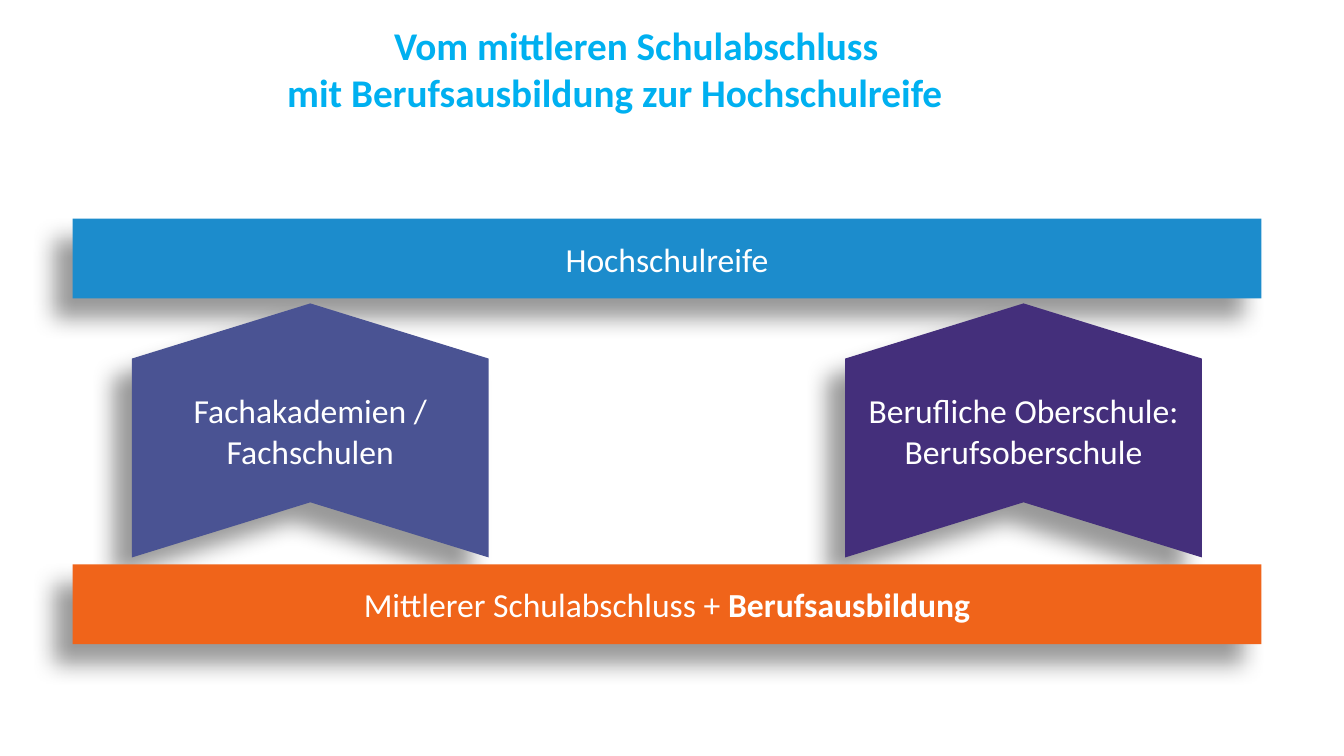
from lxml import etree
from pptx import Presentation
from pptx.dml.color import RGBColor
from pptx.enum.shapes import MSO_SHAPE
from pptx.enum.text import MSO_ANCHOR, PP_ALIGN
from pptx.oxml.ns import qn
from pptx.util import Inches, Pt

RECT = MSO_SHAPE.RECTANGLE
CHEVRON = MSO_SHAPE.CHEVRON
MIDDLE = MSO_ANCHOR.MIDDLE
CENTER = PP_ALIGN.CENTER
FONT = "Calibri"
COLORS = {
    "title": "00B0F0",
    "goal": "1C8CCC",
    "base": "F0641A",
    "left": "4A5393",
    "right": "442F7B",
    "text": "FFFFFF",
    "shade": "000000",
}
LEFT, WIDTH = 0.72, 11.79
COL = WIDTH / 20
BAR = 0.79
TOP, BASE = 2.17, 5.6


def add_run(para, text, size, color, bold=False):
    run = para.add_run()
    run.text = text
    run.font.name = FONT
    run.font.size = Pt(size)
    run.font.bold = bold
    run.font.color.rgb = RGBColor.from_string(COLORS[color])


def add_shade(shape):
    effects = etree.SubElement(shape._element.spPr, qn("a:effectLst"))
    shade = etree.SubElement(effects, qn("a:outerShdw"), blurRad=str(Pt(16)),
                             dist=str(Pt(19)), dir=str(135 * 60000),
                             algn="tr", rotWithShape="0")
    color = etree.SubElement(shade, qn("a:srgbClr"), val=COLORS["shade"])
    etree.SubElement(color, qn("a:alpha"), val="40000")


def add_block(slide, kind, box, color, runs):
    shape = slide.shapes.add_shape(kind, *map(Inches, box))
    shape.fill.solid()
    shape.fill.fore_color.rgb = RGBColor.from_string(COLORS[color])
    shape.line.fill.background()
    add_shade(shape)
    frame = shape.text_frame
    frame.word_wrap = True
    frame.vertical_anchor = MIDDLE
    para = frame.paragraphs[0]
    para.alignment = CENTER
    for text, bold in runs:
        add_run(para, text, 24, "text", bold)
    return shape


def add_title(slide, box, lines):
    frame = slide.shapes.add_textbox(*map(Inches, box)).text_frame
    frame.word_wrap = True
    for i, (text, indent) in enumerate(lines):
        para = frame.paragraphs[0] if i == 0 else frame.add_paragraph()
        para._p.get_or_add_pPr().set("marL", str(Inches(indent)))
        add_run(para, text, 28, "title", True)


def add_bar(slide, box, color, runs):
    frame = add_block(slide, RECT, box, color, runs).text_frame
    frame.margin_left = frame.margin_right = Inches(0.13)
    frame.margin_top = frame.margin_bottom = Inches(0.07)


def add_path(slide, box, color, text):
    left, top, width, height = box
    shift = (width - height) / 2
    turned = (left + shift, top - shift, height, width)
    shape = add_block(slide, CHEVRON, turned, color, [(text, False)])
    shape.rotation = 270
    shape.adjustments[0] = 0.217
    shape.text_frame._txBody.bodyPr.set("vert", "vert")


def main():
    deck = Presentation()
    deck.slide_width = Inches(13.33)
    deck.slide_height = Inches(7.5)
    slide = deck.slides.add_slide(deck.slide_layouts[6])
    add_title(slide, (2.75, 0.16, 9.76, 1.04), [
        ("Vom mittleren Schulabschluss", 1.06),
        ("mit Berufsausbildung zur Hochschulreife", 0),
    ])
    add_bar(slide, (LEFT, TOP, WIDTH, BAR), "goal", [("Hochschulreife", False)])
    paths = [
        (13, "right", "Berufliche Oberschule: Berufsoberschule"),
        (1, "left", "Fachakademien / Fachschulen"),
    ]
    for col, color, text in paths:
        box = (LEFT + col * COL, TOP + BAR + 0.05, 6 * COL, 2.52)
        add_path(slide, box, color, text)
    add_bar(slide, (LEFT, BASE, WIDTH, BAR), "base", [
        ("Mittlerer Schulabschluss + ", False),
        ("Berufsausbildung", True),
    ])
    deck.save("out.pptx")


if __name__ == "__main__":
    main()
